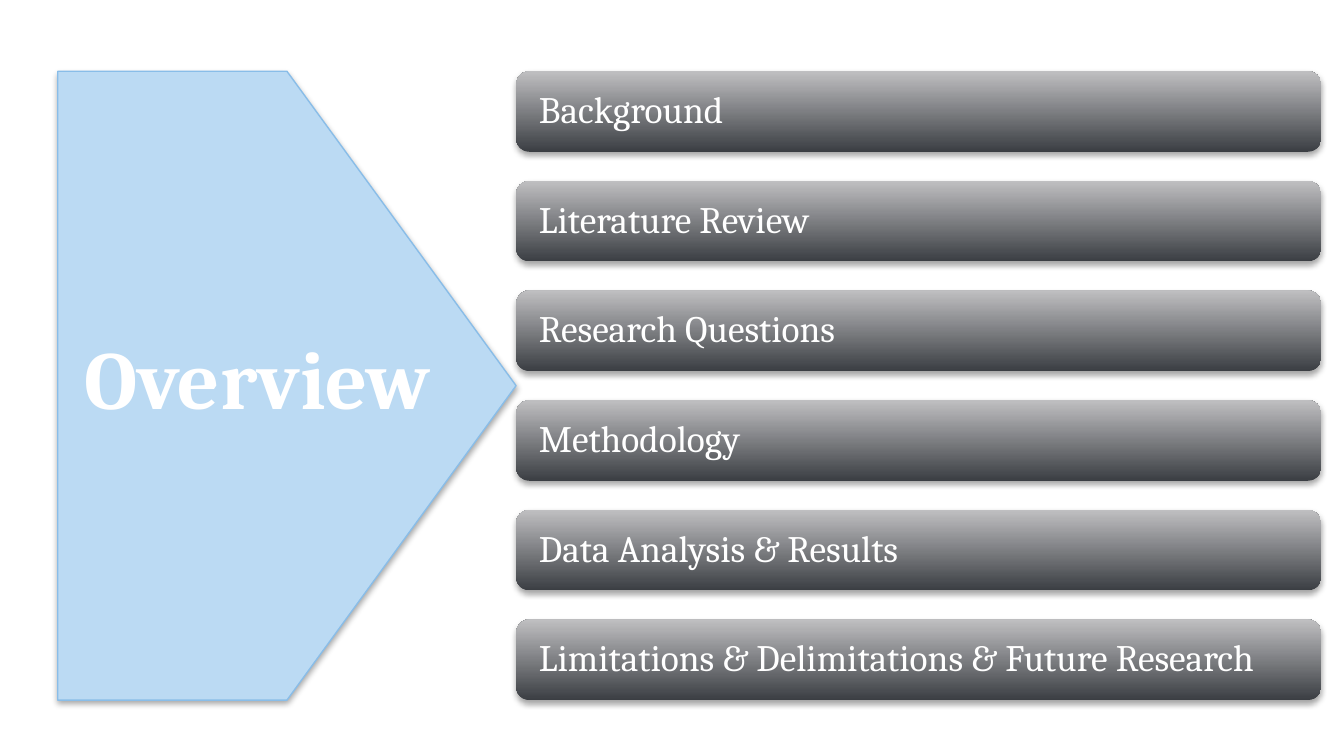
"""Build the overview slide: a pentagon arrow pointing at six agenda bars."""
from dataclasses import dataclass

from lxml import etree
from pptx import Presentation
from pptx import util as u
from pptx.dml.color import RGBColor
from pptx.enum import shapes, text
from pptx.oxml.ns import qn


@dataclass(frozen=True)
class Theme:
    font: str = "Cambria"
    title_size: int = 44
    topic_size: int = 20
    ink: str = "FFFFFF"
    arrow_fill: str = "BBDAF3"
    arrow_line: str = "89BDE8"
    bar_dark: str = "3B3E43"
    bar_light: str = "BFBFC1"
    shadow: str = "000000"


class OverviewSlide:
    def __init__(self, slide, theme):
        self.slide = slide
        self.theme = theme

    def cast_shadow(self, shape):
        shape.shadow.inherit = False
        effects = shape._element.spPr.find(qn("a:effectLst"))
        outer = etree.SubElement(
            effects, qn("a:outerShdw"), blurRad=str(u.Pt(3.1)),
            dist=str(u.Pt(1.8)), dir="5400000", rotWithShape="0")
        color = etree.SubElement(outer, qn("a:srgbClr"), val=self.theme.shadow)
        etree.SubElement(color, qn("a:alpha"), val="35000")

    def outline(self, parent, preset, box):
        shape = parent.add_shape(preset, *map(u.Inches, box))
        self.cast_shadow(shape)
        return shape

    def label(self, parent, wording, box, size, bold=False):
        holder = parent.add_textbox(*map(u.Inches, box))
        frame = holder.text_frame
        frame.word_wrap = True
        frame.text = wording
        font = frame.paragraphs[0].runs[0].font
        font.name, font.size, font.bold = self.theme.font, u.Pt(size), bold
        font.color.rgb = RGBColor.from_string(self.theme.ink)
        return frame

    def arrow(self, box):
        arrow = self.outline(self.slide.shapes, shapes.MSO_SHAPE.PENTAGON, box)
        arrow.fill.solid()
        arrow.fill.fore_color.rgb = RGBColor.from_string(self.theme.arrow_fill)
        arrow.line.color.rgb = RGBColor.from_string(self.theme.arrow_line)
        arrow.line.width = u.Pt(0.75)

    def title(self, wording, box):
        frame = self.label(self.slide.shapes, wording, box, self.theme.title_size, bold=True)
        frame.auto_size = text.MSO_AUTO_SIZE.SHAPE_TO_FIT_TEXT

    def topic_bar(self, topic, left, top, width, height):
        group = self.slide.shapes.add_group_shape().shapes
        bar = self.outline(group, shapes.MSO_SHAPE.ROUNDED_RECTANGLE, (left, top, width, height))
        bar.line.fill.background()
        bar.fill.gradient()
        bar.fill.gradient_angle = 90
        for stop, color in zip(bar.fill.gradient_stops, (self.theme.bar_dark, self.theme.bar_light)):
            stop.color.rgb = RGBColor.from_string(color)
        inner = (left + 0.04, top + 0.03, width - 0.08, height - 0.06)
        frame = self.label(group, topic, inner, self.theme.topic_size)
        frame.vertical_anchor = text.MSO_ANCHOR.MIDDLE
        frame.margin_left = frame.margin_right = u.Inches(0.13)
        frame.margin_top = frame.margin_bottom = u.Inches(0.13)
        frame.paragraphs[0].line_spacing = 0.9


def main():
    deck = Presentation()
    deck.slide_width = u.Inches(10)
    deck.slide_height = u.Inches(10 * 9 / 16)
    overview = OverviewSlide(deck.slides.add_slide(deck.slide_layouts[6]), Theme())

    top, height, bar_height = 0.53, 4.68, 0.6
    overview.arrow((0.43, top, 3.41, height))
    overview.title("Overview", (0.53, 2.39, 2.89, 0.84))

    topics = [
        "Background",
        "Literature Review",
        "Research Questions",
        "Methodology",
        "Data Analysis & Results",
        "Limitations & Delimitations & Future Research",
    ]
    pitch = (height - bar_height) / (len(topics) - 1)
    for row, topic in enumerate(topics):
        overview.topic_bar(topic, 3.84, top + row * pitch, 5.99, bar_height)

    deck.save("out.pptx")


if __name__ == "__main__":
    main()
